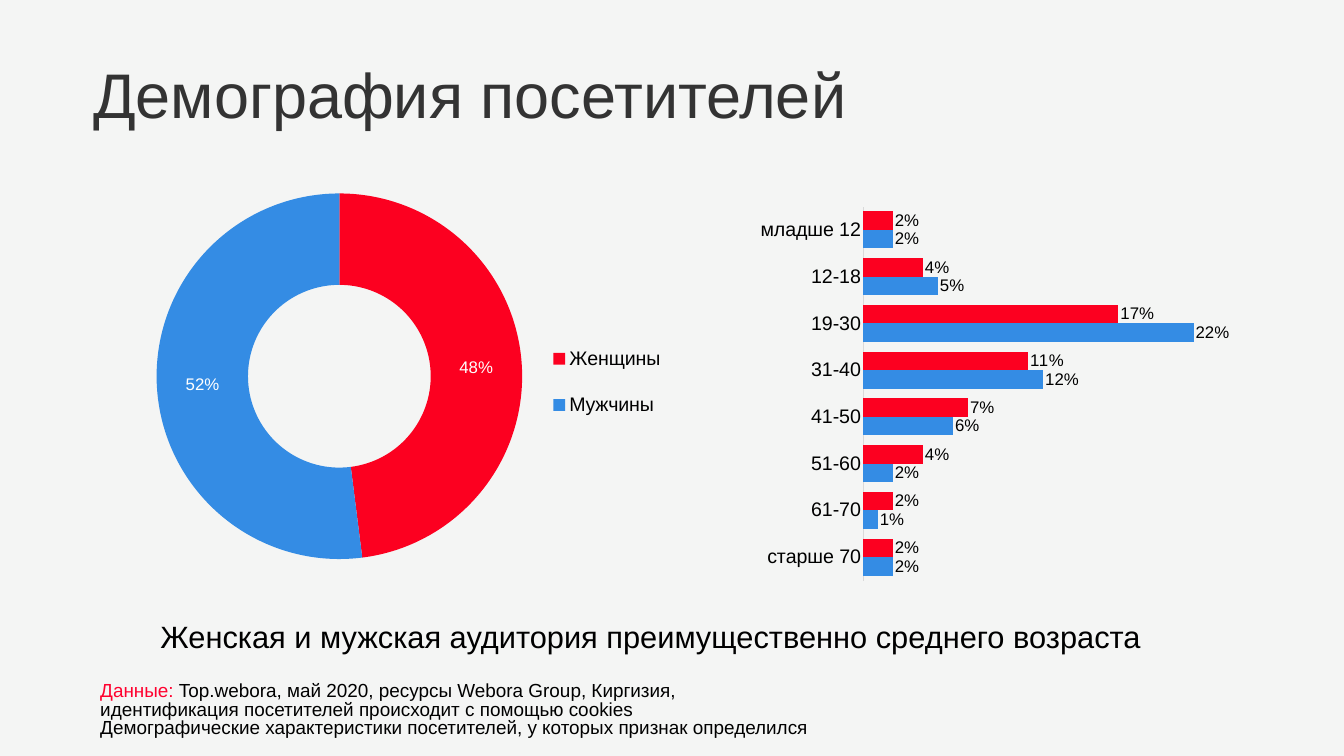
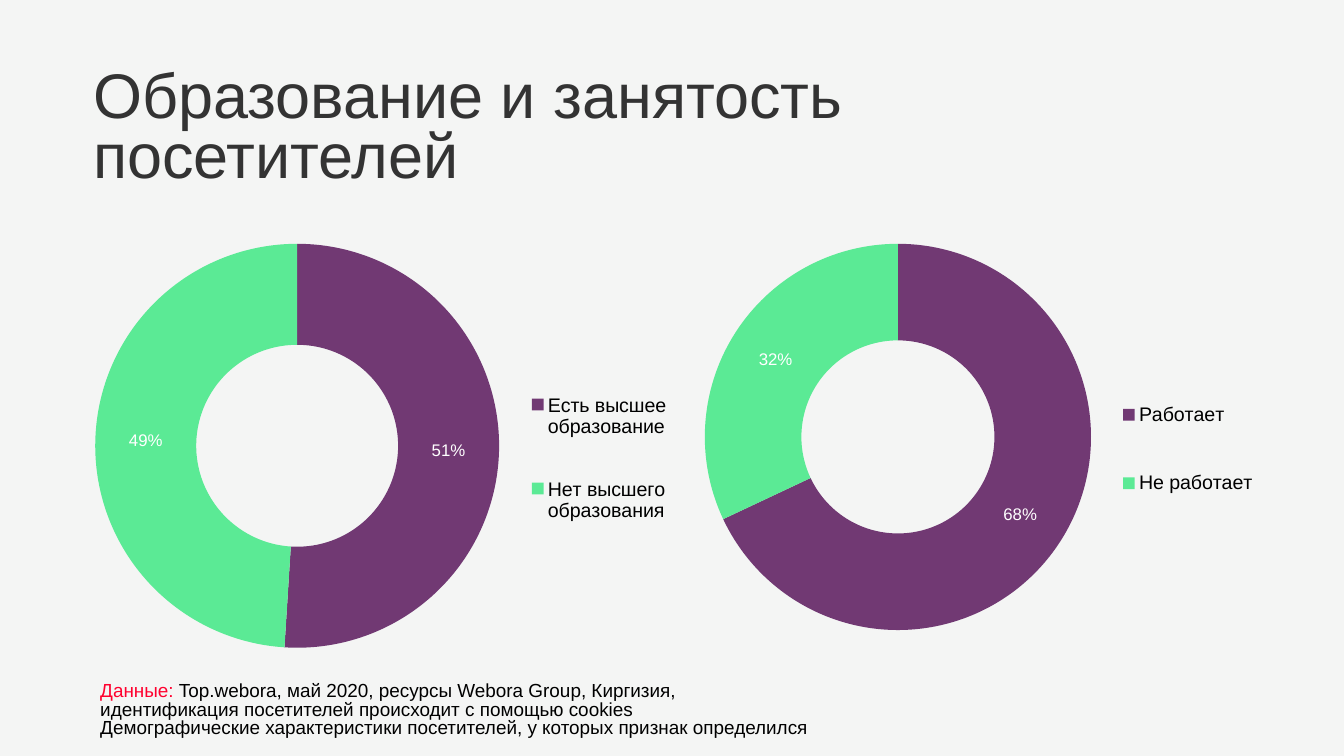
"""Build two slides on the demography, education and employment of visitors."""
from dataclasses import dataclass
from typing import Any, NamedTuple

from lxml.etree import SubElement
from pptx import Presentation
from pptx.chart.chart import Chart
from pptx.chart.data import CategoryChartData
from pptx.dml.color import RGBColor
from pptx.enum.chart import XL_CHART_TYPE as ChartType
from pptx.enum.chart import XL_LABEL_POSITION as LabelPosition
from pptx.enum.chart import XL_LEGEND_POSITION as LegendPosition
from pptx.enum.chart import XL_TICK_MARK as TickMark
from pptx.enum.text import MSO_ANCHOR as Anchor
from pptx.enum.text import MSO_AUTO_SIZE as AutoSize
from pptx.enum.text import PP_ALIGN as Align
from pptx.oxml.ns import qn
from pptx.slide import Slide
from pptx.text.text import Font, TextFrame
from pptx.util import Inches, Pt

SLIDE_WIDTH, SLIDE_HEIGHT = Inches(26.67), Inches(15)
TITLE_ONLY = 5
PERCENT = "0%"


@dataclass(frozen=True)
class Theme:
    """Colours, typeface and type sizes of the deck."""

    background: str = "F4F5F4"
    heading: str = "333333"
    text: str = "000000"
    accent: str = "FF002E"
    on_color: str = "FFFFFF"
    axis: str = "D9D9D9"
    women: str = "FC0020"
    men: str = "348CE4"
    positive: str = "713973"
    negative: str = "5BEA95"
    typeface: str = "Arial"
    title_size: int = 90
    caption_size: int = 44
    legend_size: int = 28
    source_size: int = 27
    label_size: int = 24
    chart_size: int = 18


class Area(NamedTuple):
    """A rectangle in percent of the slide's width and height."""

    left: float
    top: float
    width: float
    height: float

    def lengths(self) -> list[int]:
        """Return the rectangle in slide units."""
        sides = (SLIDE_WIDTH, SLIDE_HEIGHT) * 2
        return [round(side * share / 100) for side, share in zip(sides, self)]


class Sector(NamedTuple):
    """One coloured part of a doughnut."""

    name: str
    value: float
    color: str


class Doughnut(NamedTuple):
    """A doughnut chart, its place and its legend's place in the chart."""

    area: Area
    legend: dict[str, float]
    sectors: tuple[Sector, ...]


class AgeGroup(NamedTuple):
    """Shares of men and women in one age group."""

    name: str
    men: float
    women: float


class Span(NamedTuple):
    """A stretch of text in one colour."""

    text: str
    color: str


THEME = Theme()
TITLE_AREA = Area(6.56, 8.93, 67.27, 11.2)
CAPTION_AREA = Area(4.39, 80.87, 88.11, 7.27)
SOURCE_AREA = Area(7.09, 90.07, 63.89, 7.93)
AGE_AREA = Area(47.69, 25.73, 45.86, 53.2)
AGE_PLOT = {"x": 0.36, "y": 0.03, "w": 0.61, "h": 0.93}

GENDER = Doughnut(
    Area(7.39, 24.67, 44.96, 50.2),
    {"x": 0.74, "y": 0.36, "w": 0.2, "h": 0.31},
    (Sector("Женщины", 0.48, THEME.women), Sector("Мужчины", 0.52, THEME.men)),
)
EDUCATION = Doughnut(
    Area(3, 31.33, 49.49, 55.27),
    {"x": 0.73, "y": 0.28, "w": 0.22, "h": 0.5},
    (
        Sector("Есть высшее образование", 0.51, THEME.positive),
        Sector("Нет высшего образования", 0.49, THEME.negative),
    ),
)
EMPLOYMENT = Doughnut(
    Area(48.56, 31.33, 47.39, 52.93),
    {"x": 0.73, "y": 0.3, "w": 0.22, "h": 0.46},
    (
        Sector("Работает", 0.68, THEME.positive),
        Sector("Не работает", 0.32, THEME.negative),
    ),
)
AGE_GROUPS = (
    AgeGroup("старше 70", 0.02, 0.02),
    AgeGroup("61-70", 0.01, 0.02),
    AgeGroup("51-60", 0.02, 0.04),
    AgeGroup("41-50", 0.06, 0.07),
    AgeGroup("31-40", 0.12, 0.11),
    AgeGroup("19-30", 0.22, 0.17),
    AgeGroup("12-18", 0.05, 0.04),
    AgeGroup("младше 12", 0.02, 0.02),
)
CAPTION = "Женская и мужская аудитория преимущественно среднего возраста"
SOURCE = (
    (
        Span("Данные:", THEME.accent),
        Span(" Top.webora, май 2020, ресурсы Webora Group, Киргизия,", THEME.text),
    ),
    (Span("идентификация посетителей происходит с помощью cookies", THEME.text),),
    (Span("Демографические характеристики посетителей, у которых признак определился", THEME.text),),
)
FRAME_FORMAT = {
    "word_wrap": True,
    "auto_size": AutoSize.NONE,
    "margin_left": Inches(0.1),
    "margin_right": Inches(0.1),
    "margin_top": Inches(0.05),
    "margin_bottom": Inches(0.05),
}
LABEL_FORMAT = {
    "show_value": True,
    "show_percentage": False,
    "number_format": PERCENT,
    "number_format_is_linked": False,
}
SHARE_AXIS_FORMAT = {
    "visible": False,
    "has_major_gridlines": False,
    "minimum_scale": 0,
    "maximum_scale": 0.25,
}


def apply_format(target: Any, values: dict[str, Any]) -> None:
    """Set every attribute named in the format values."""
    for name, value in values.items():
        setattr(target, name, value)


def style_font(font: Font, size: int, color: str) -> None:
    """Give a font the deck's typeface, a size and a colour."""
    apply_format(font, {"name": THEME.typeface, "size": Pt(size)})
    font.color.rgb = RGBColor.from_string(color)


def fill_solid(fill: Any, color: str) -> None:
    """Make a fill one plain colour."""
    fill.solid()
    fill.fore_color.rgb = RGBColor.from_string(color)


def write_text(
    frame: TextFrame, lines: tuple[tuple[Span, ...], ...], size: int,
    spacing: float = 0.8, align: Align = Align.LEFT, anchor: Anchor = Anchor.TOP,
) -> None:
    """Fill a text frame with lines of coloured spans."""
    apply_format(frame, {**FRAME_FORMAT, "vertical_anchor": anchor})
    for index, line in enumerate(lines):
        para = frame.add_paragraph() if index else frame.paragraphs[0]
        apply_format(para, {"alignment": align, "line_spacing": spacing})
        for span in line:
            run = para.add_run()
            run.text = span.text
            style_font(run.font, size, span.color)


def add_page(deck: Any, title: str) -> Slide:
    """Add a slide with its title and the note on the data source."""
    page = deck.slides.add_slide(deck.slide_layouts[TITLE_ONLY])
    heading = page.shapes.title
    apply_format(heading, dict(zip(Area._fields, TITLE_AREA.lengths())))
    write_text(heading.text_frame, ((Span(title, THEME.heading),),), THEME.title_size)
    source = page.shapes.add_textbox(*SOURCE_AREA.lengths())
    write_text(source.text_frame, SOURCE, THEME.source_size)
    return page


def add_chart(page: Slide, kind: ChartType, area: Area, data: CategoryChartData) -> Chart:
    """Place a chart without a title and set its base font."""
    chart = page.shapes.add_chart(kind, *area.lengths(), data).chart
    chart.has_title = False
    style_font(chart.font, THEME.chart_size, THEME.text)
    return chart


def label_values(series: Any, color: str) -> Any:
    """Show the values of a series as percentages."""
    labels = series.data_labels
    apply_format(labels, LABEL_FORMAT)
    style_font(labels.font, THEME.label_size, color)
    return labels


def fix_layout(parent: Any, index: int, settings: dict[str, Any]) -> None:
    """Place a part of a chart by shares of the chart."""
    for old in parent.findall(qn("c:layout")):
        parent.remove(old)
    layout = SubElement(parent, qn("c:layout"))
    parent.insert(index, layout)
    manual = SubElement(layout, qn("c:manualLayout"))
    for name, value in settings.items():
        SubElement(manual, qn(f"c:{name}")).set("val", str(value))


def draw_doughnut(page: Slide, doughnut: Doughnut) -> None:
    """Draw a doughnut with a legend on its right."""
    data = CategoryChartData(number_format=PERCENT)
    data.categories = [sector.name for sector in doughnut.sectors]
    data.add_series("Series 1", [sector.value for sector in doughnut.sectors])
    chart = add_chart(page, ChartType.DOUGHNUT, doughnut.area, data)
    chart.has_legend = True
    legend = chart.legend
    apply_format(legend, {"position": LegendPosition.RIGHT, "include_in_layout": False})
    style_font(legend.font, THEME.legend_size, THEME.text)
    fix_layout(legend._element, 1, {"xMode": "edge", "yMode": "edge", **doughnut.legend})
    plot = chart.plots[0]
    plot.vary_by_categories = True
    series = plot.series[0]
    for index, sector in enumerate(doughnut.sectors):
        fill_solid(series.points[index].format.fill, sector.color)
    label_values(series, THEME.on_color)


def draw_age_bars(page: Slide) -> None:
    """Draw the age groups as paired bars for men and women."""
    data = CategoryChartData(number_format=PERCENT)
    data.categories = [group.name for group in AGE_GROUPS]
    data.add_series("Series 1", [group.men for group in AGE_GROUPS])
    data.add_series("Series 2", [group.women for group in AGE_GROUPS])
    chart = add_chart(page, ChartType.BAR_CLUSTERED, AGE_AREA, data)
    chart.has_legend = False
    plot = chart.plots[0]
    apply_format(plot, {"gap_width": 52, "vary_by_categories": False})
    for series, color in zip(plot.series, (THEME.men, THEME.women)):
        fill_solid(series.format.fill, color)
        label_values(series, THEME.text).position = LabelPosition.OUTSIDE_END
    ages = chart.category_axis
    apply_format(ages, {"major_tick_mark": TickMark.NONE, "minor_tick_mark": TickMark.NONE})
    style_font(ages.tick_labels.font, THEME.legend_size, THEME.text)
    ages.format.line.width = Pt(0.75)
    ages.format.line.color.rgb = RGBColor.from_string(THEME.axis)
    apply_format(chart.value_axis, SHARE_AXIS_FORMAT)
    inner = {"layoutTarget": "inner", "xMode": "edge", "yMode": "edge", **AGE_PLOT}
    fix_layout(plot._element.getparent(), 0, inner)


def main() -> None:
    """Build and save the deck."""
    deck = Presentation()
    apply_format(deck, {"slide_width": SLIDE_WIDTH, "slide_height": SLIDE_HEIGHT})
    fill_solid(deck.slide_master.background.fill, THEME.background)

    demography = add_page(deck, "Демография посетителей")
    draw_doughnut(demography, GENDER)
    draw_age_bars(demography)
    caption = demography.shapes.add_textbox(*CAPTION_AREA.lengths()).text_frame
    line = ((Span(CAPTION, THEME.text),),)
    write_text(caption, line, THEME.caption_size, 0.9, Align.CENTER, Anchor.MIDDLE)

    occupation = add_page(deck, "Образование и занятость посетителей")
    for doughnut in (EDUCATION, EMPLOYMENT):
        draw_doughnut(occupation, doughnut)
    deck.save("out.pptx")


if __name__ == "__main__":
    main()
